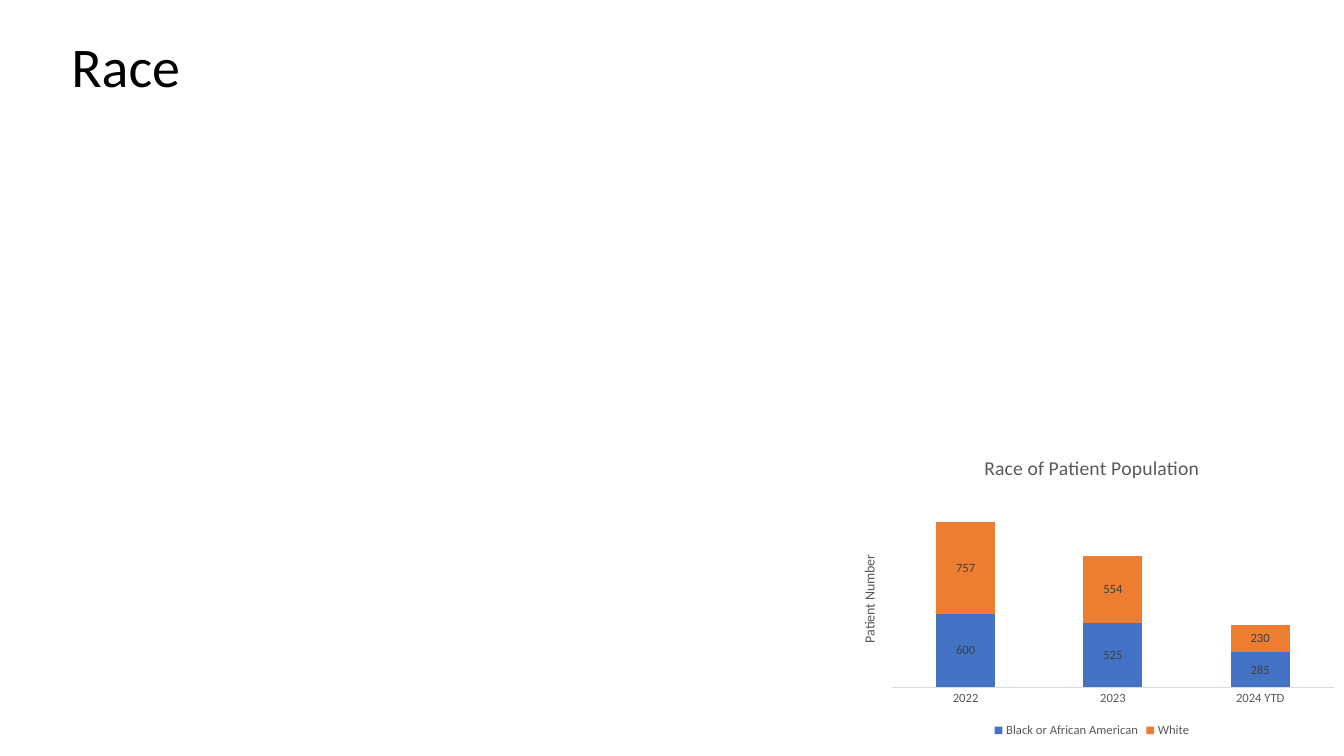
import pptx
import pptx.chart.data
import pptx.dml.color
import pptx.enum.chart
import pptx.enum.text
import pptx.util

COLORS = {
    "title": "000000",
    "text": "595959",
    "label": "404040",
    "axis": "D9D9D9",
    "Black or African American": "4472C4",
    "White": "ED7D31",
}
YEARS = ["2022", "2023", "2024 YTD"]
PATIENTS = {
    "Black or African American": [600, 525, 285],
    "White": [757, 554, 230],
}


class SlideBuilder:
    """Hold the slide style and add titles and charts to the current slide."""

    def __init__(self, prs, font="Calibri"):
        self.slide = prs.slides.add_slide(prs.slide_layouts[6])
        self.font = font

    def color(self, name):
        return pptx.dml.color.RGBColor.from_string(COLORS[name])

    def style(self, font, size, color):
        font.name = self.font
        font.size = pptx.util.Pt(size)
        font.bold = False
        font.color.rgb = self.color(color)

    def run(self, tf, text, size, color):
        p = tf.paragraphs[0]
        r = p.add_run()
        r.text = text
        self.style(r.font, size, color)
        return p

    def title(self, text, *box):
        sp = self.slide.shapes.add_textbox(*map(pptx.util.Inches, box))
        tf = sp.text_frame
        tf.word_wrap = True
        tf.vertical_anchor = pptx.enum.text.MSO_ANCHOR.MIDDLE
        self.run(tf, text, 40, "title").line_spacing = 0.9

    def stacked_chart(self, title, axis_title, cats, series, *box):
        enums = pptx.enum.chart
        data = pptx.chart.data.CategoryChartData(number_format="0")
        data.categories = cats
        for name, values in series.items():
            data.add_series(name, values)
        chart = self.slide.shapes.add_chart(
            enums.XL_CHART_TYPE.COLUMN_STACKED,
            *map(pptx.util.Inches, box), data).chart
        self.style(chart.font, 10, "title")
        self.run(chart.chart_title.text_frame, title, 14, "text")
        chart.chart_title.include_in_layout = False

        chart.has_legend = True
        chart.legend.position = enums.XL_LEGEND_POSITION.BOTTOM
        chart.legend.include_in_layout = False
        self.style(chart.legend.font, 9, "text")

        cat_axis = chart.category_axis
        cat_axis.major_tick_mark = enums.XL_TICK_MARK.NONE
        cat_axis.format.line.color.rgb = self.color("axis")
        cat_axis.format.line.width = pptx.util.Pt(0.75)
        self.style(cat_axis.tick_labels.font, 9, "text")

        val_axis = chart.value_axis
        val_axis.minimum_scale = 0
        val_axis.maximum_scale = 1600
        val_axis.has_major_gridlines = False
        val_axis.visible = False
        self.run(val_axis.axis_title.text_frame, axis_title, 10, "text")

        plot = chart.plots[0]
        plot.gap_width = 150
        plot.overlap = 100
        plot.vary_by_categories = False
        for ser in plot.series:
            ser.format.fill.solid()
            ser.format.fill.fore_color.rgb = self.color(ser.name)
            labels = ser.data_labels
            labels.show_value = True
            labels.number_format = "0"
            labels.number_format_is_linked = False
            labels.position = enums.XL_LABEL_POSITION.CENTER
            self.style(labels.font, 9, "label")


def main():
    prs = pptx.Presentation()
    prs.slide_width = pptx.util.Inches(13.33)
    prs.slide_height = pptx.util.Inches(7.5)
    s = SlideBuilder(prs)
    s.stacked_chart("Race of Patient Population", "Patient Number",
                    YEARS, PATIENTS, 8.33, 4.36, 5, 3)
    s.title("Race", 0.61, 0.14, 2.17, 1.1)
    prs.save("out.pptx")


if __name__ == "__main__":
    main()
